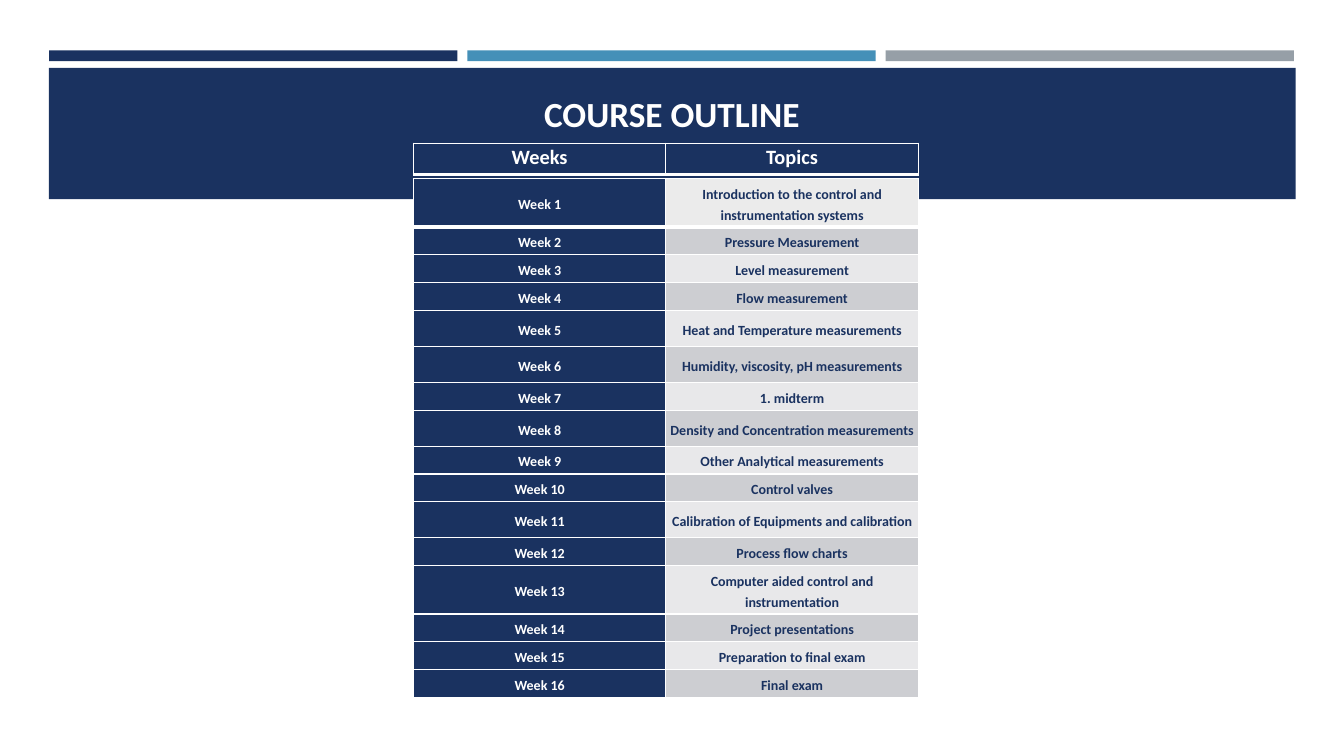
from lxml.etree import SubElement
from pptx import Presentation
from pptx.dml.color import RGBColor
from pptx.enum.shapes import MSO_SHAPE
from pptx.enum.text import MSO_ANCHOR as Anchor, PP_ALIGN as Align
from pptx.oxml.ns import qn
from pptx.util import Cm, Pt

NAVY, BLUE, GRAY, WHITE = "1A3260", "4590B8", "969FA7", "FFFFFF"
LIGHT, DARK, FIRST = "E8E8EA", "CDCED2", "EBEBEB"
LOW, TALL, DOUBLE = 0.7, 0.91, 1.22


def color(value):
    return RGBColor.from_string(value)


def style_cell(cell, text, size, text_color, fill, margin, bottom_width):
    cell.text = text
    cell.vertical_anchor = Anchor.MIDDLE
    cell.margin_left = cell.margin_right = Cm(margin)
    cell.margin_top = cell.margin_bottom = Cm(margin)
    para = cell.text_frame.paragraphs[0]
    para.alignment = Align.CENTER
    para.line_spacing = Pt(15)
    para.font.name = "Calibri"
    para.font.size = Pt(size)
    para.font.bold = True
    para.font.color.rgb = color(text_color)
    properties = cell._tc.get_or_add_tcPr()
    for side, width in (("L", 1), ("R", 1), ("T", 1), ("B", bottom_width)):
        border = SubElement(properties, qn(f"a:ln{side}"), w=str(Pt(width)))
        solid = SubElement(border, qn("a:solidFill"))
        SubElement(solid, qn("a:srgbClr"), val=WHITE)
    cell.fill.solid()
    cell.fill.fore_color.rgb = color(fill)


deck = Presentation()
deck.slide_width, deck.slide_height = Cm(33.87), Cm(19.05)
page = deck.slides.add_slide(deck.slide_layouts[6])

bars = [(1.24 + 10.54 * index, 1.27, 10.29, 0.27, fill)
        for index, fill in enumerate((NAVY, BLUE, GRAY))]
banner = (1.23, 1.71, 31.42, 3.31, NAVY)
for left, top, width, height, fill in bars + [banner]:
    box = page.shapes.add_shape(
        MSO_SHAPE.RECTANGLE, Cm(left), Cm(top), Cm(width), Cm(height))
    box.shadow.inherit = False
    box.fill.solid()
    box.fill.fore_color.rgb = color(fill)
    box.line.fill.background()

title = page.shapes.add_textbox(Cm(1.62), Cm(1.96), Cm(30.63), Cm(1.55))
title.text_frame.word_wrap = True
title.text_frame.vertical_anchor = Anchor.BOTTOM
para = title.text_frame.paragraphs[0]
para.text = "COURSE OUTLINE"
para.alignment = Align.CENTER
para.font.name = "Calibri"
para.font.size = Pt(25.2)
para.font.bold = True
para.font.color.rgb = color(WHITE)

topics = [
    ("Introduction to the control and instrumentation systems", DOUBLE),
    ("Pressure Measurement", LOW),
    ("Level measurement", LOW),
    ("Flow measurement", LOW),
    ("Heat and Temperature measurements", TALL),
    ("Humidity, viscosity, pH measurements", TALL),
    ("1. midterm", LOW),
    ("Density and Concentration measurements", TALL),
    ("Other Analytical measurements", LOW),
    ("Control valves", LOW),
    ("Calibration of Equipments and calibration", TALL),
    ("Process flow charts", LOW),
    ("Computer aided control and instrumentation", DOUBLE),
    ("Project presentations", LOW),
    ("Preparation to final exam", LOW),
    ("Final exam", LOW),
]
total = sum(height for topic, height in topics)
schedule = page.shapes.add_table(
    len(topics), 2, Cm(10.42), Cm(4.5), Cm(12.72), Cm(total)).table
header = page.shapes.add_table(
    1, 2, Cm(10.42), Cm(3.61), Cm(12.72), Cm(0.79)).table
for table in (schedule, header):
    table.first_row = table.horz_banding = False

for index, (topic, height) in enumerate(topics):
    schedule.rows[index].height = Cm(height)
    fill = DARK if index % 2 else LIGHT if index else FIRST
    bottom_width = 1 if index else 3
    style_cell(schedule.cell(index, 0), f"Week {index + 1}", 10, WHITE, NAVY, 0.08, bottom_width)
    style_cell(schedule.cell(index, 1), topic, 10, NAVY, fill, 0.08, bottom_width)

for column, heading in enumerate(("Weeks", "Topics")):
    style_cell(header.cell(0, column), heading, 14.5, WHITE, NAVY, 0.13, 3)

deck.save("out.pptx")
